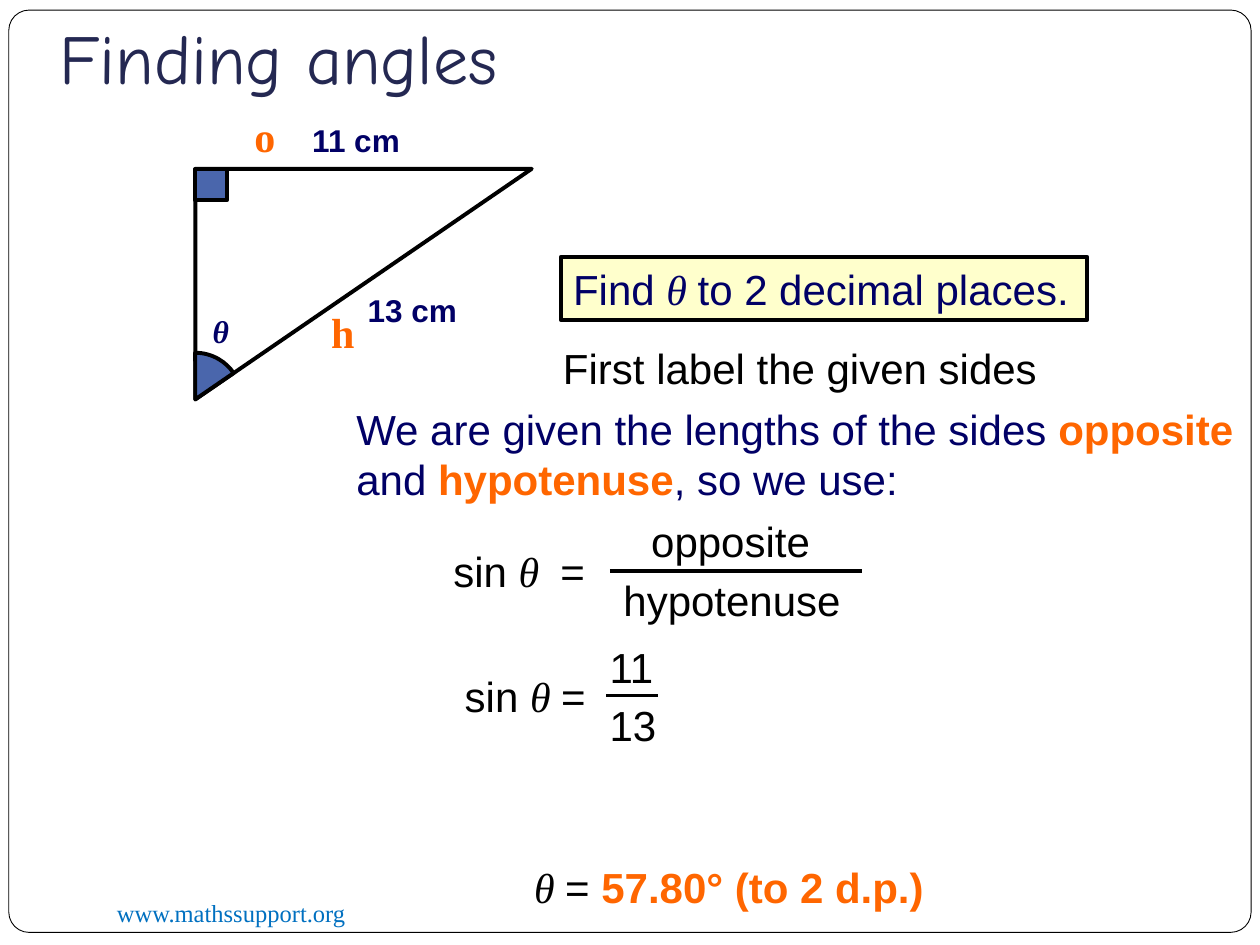
import math

import pptx
import pptx.dml.color
import pptx.enum.shapes
import pptx.enum.text
import pptx.oxml
import pptx.util

Inches, Pt = pptx.util.Inches, pptx.util.Pt
RGB = pptx.dml.color.RGBColor.from_string
MSO_SHAPE = pptx.enum.shapes.MSO_SHAPE
MSO_ANCHOR = pptx.enum.text.MSO_ANCHOR
MSO_AUTO_SIZE = pptx.enum.text.MSO_AUTO_SIZE
PP_ALIGN = pptx.enum.text.PP_ALIGN

THEME = {
    "white": RGB("FFFFFF"), "black": RGB("000000"), "navy": RGB("010066"),
    "orange": RGB("FF6600"), "blue": RGB("4A66AC"), "cream": RGB("FFFFCC"),
    "title": RGB("242852"), "link": RGB("0070C0"),
    "sans": "Arial", "serif": "Times New Roman", "heading": "Comic Neue",
    "title_size": Pt(40), "body_size": Pt(24), "label_size": Pt(18),
    "footer_size": Pt(14), "rule": Pt(2.25), "frame": Pt(0.5),
}

# Text formats
BODY = {"name": THEME["sans"], "size": THEME["body_size"], "color": THEME["black"]}
THETA = {**BODY, "name": THEME["serif"], "italic": True}
NAVY = {**BODY, "color": THEME["navy"]}
KEY = {**BODY, "color": THEME["orange"], "bold": True}
SIDE = {**KEY, "name": THEME["serif"]}
LABEL = {**NAVY, "size": THEME["label_size"], "bold": True}
FOOTER = {"name": THEME["serif"], "size": THEME["footer_size"], "color": THEME["link"]}
TITLE = {"name": THEME["heading"], "size": THEME["title_size"], "color": THEME["title"]}


def write(sp, runs, wrap=False):
    tf = sp.text_frame
    tf.word_wrap = wrap
    p = tf.paragraphs[0]
    p.alignment = PP_ALIGN.LEFT
    for text, fmt in runs:
        r = p.add_run()
        r.text = text
        for key, value in fmt.items():
            if key == "color":
                r.font.color.rgb = value
            else:
                setattr(r.font, key, value)


def draw(shapes, kind, box, fill=None, width=THEME["rule"]):
    sp = shapes.add_shape(kind, *map(Inches, box))
    sp.shadow.inherit = False
    if fill is None:
        sp.fill.background()
    else:
        sp.fill.solid()
        sp.fill.fore_color.rgb = fill
    sp.line.color.rgb = THEME["black"]
    sp.line.width = width
    return sp


prs = pptx.Presentation()
prs.slide_width, prs.slide_height = Inches(10), Inches(7.5)
s = prs.slides.add_slide(prs.slide_layouts[5])

# Frame, placed behind the title
frame = draw(s.shapes, MSO_SHAPE.ROUNDED_RECTANGLE, (0.07, 0.08, 9.86, 7.32),
             THEME["white"], THEME["frame"])
frame.adjustments[0] = 0.022
s.shapes.element.insert(2, frame.element)

# Title
title = s.shapes.title
title.left, title.top, title.width, title.height = map(Inches, (0.37, -0.01, 8.54, 0.89))
title.text_frame.vertical_anchor = MSO_ANCHOR.BOTTOM
title.text_frame.margin_bottom = Inches(0.1)
title.text_frame.auto_size = MSO_AUTO_SIZE.NONE
write(title, [("Finding angles", TITLE)], wrap=True)

# Triangle with its right angle at the top left
triangle, formula, values = (s.shapes.add_group_shape().shapes for _ in range(3))
left, top, base, height = 1.55, 1.34, 2.67, 1.83
sp = draw(triangle, MSO_SHAPE.RIGHT_TRIANGLE,
          (left + (base - height) / 2, top + (height - base) / 2, height, base))
sp.rotation = 90

# Angle markers
radius = 0.37
sp = draw(triangle, MSO_SHAPE.PIE,
          (left - radius, top + height - radius, 2 * radius, 2 * radius), THEME["blue"])
slope = math.degrees(math.atan2(height, base))
for i, angle in enumerate((270, 360 - slope)):
    sp.adjustments[i] = angle * 0.6  # 60000 units per degree, scaled by 100000
draw(triangle, MSO_SHAPE.RECTANGLE, (left, top, 0.25, 0.25), THEME["blue"])

# Fraction bars
for shapes, x1, x2, y in ((formula, 4.84, 6.84, 4.53), (values, 4.81, 5.22, 5.52)):
    bar = shapes.add_connector(pptx.enum.shapes.MSO_CONNECTOR.STRAIGHT,
                               Inches(x1), Inches(y), Inches(x2), Inches(y))
    bar.line.color.rgb = THEME["black"]
    bar.line.width = THEME["rule"]
    bar.element.spPr.append(pptx.oxml.parse_xml(
        '<a:effectLst xmlns:a="http://schemas.openxmlformats.org/drawingml/2006/main"/>'))

# Question box
sp = draw(s.shapes, MSO_SHAPE.RECTANGLE, (4.45, 2.04, 4.18, 0.5), THEME["cream"])
write(sp, [("Find ", NAVY), ("θ ", {**THETA, "color": THEME["navy"]}),
           ("to 2 decimal places.", NAVY)])

# Labels, working and footer
for shapes, box, wrap, runs in (
    (triangle, (1.59, 2.43, 0.33, 0.4), False,
     [("θ", {**LABEL, "name": THEME["serif"], "italic": True})]),
    (triangle, (2.82, 2.26, 0.92, 0.4), False, [("13 cm", LABEL)]),
    (triangle, (2.38, 0.91, 0.9, 0.4), False, [("11 cm", LABEL)]),
    (s.shapes, (2.53, 2.38, 0.41, 0.5), False, [("h", SIDE)]),
    (s.shapes, (1.92, 0.83, 0.38, 0.5), False, [("o", SIDE)]),
    (s.shapes, (4.37, 2.67, 4.64, 0.5), True, [("First label the given sides", BODY)]),
    (s.shapes, (2.73, 3.15, 7.27, 0.91), True,
     [("We are given the lengths of the sides ", NAVY), ("opposite", KEY),
      (" and ", NAVY), ("hypotenuse", KEY), (", so we use:", NAVY)]),
    (formula, (3.5, 4.28, 1.26, 0.51), False,
     [("sin ", BODY), ("θ  ", THETA), ("=", BODY)]),
    (formula, (5.07, 4.04, 1.46, 0.5), False, [("opposite", BODY)]),
    (formula, (4.85, 4.51, 1.94, 0.51), False, [("hypotenuse", BODY)]),
    (values, (3.59, 5.27, 1.17, 0.51), False,
     [("sin ", BODY), ("θ ", THETA), ("=", BODY)]),
    (values, (4.74, 5.04, 0.55, 0.51), False, [("11", BODY)]),
    (values, (4.74, 5.5, 0.58, 0.51), False, [("13", BODY)]),
    (s.shapes, (4.14, 6.79, 3.32, 0.5), False,
     [("θ ", THETA), ("=", BODY), (" 57.80° (to 2 d.p.)", KEY)]),
    (s.shapes, (0.83, 7.08, 3.25, 0.34), True, [("www.mathssupport.org", FOOTER)]),
):
    sp = shapes.add_textbox(*map(Inches, box))
    sp.text_frame.auto_size = MSO_AUTO_SIZE.SHAPE_TO_FIT_TEXT
    write(sp, runs, wrap)

prs.save("out.pptx")
